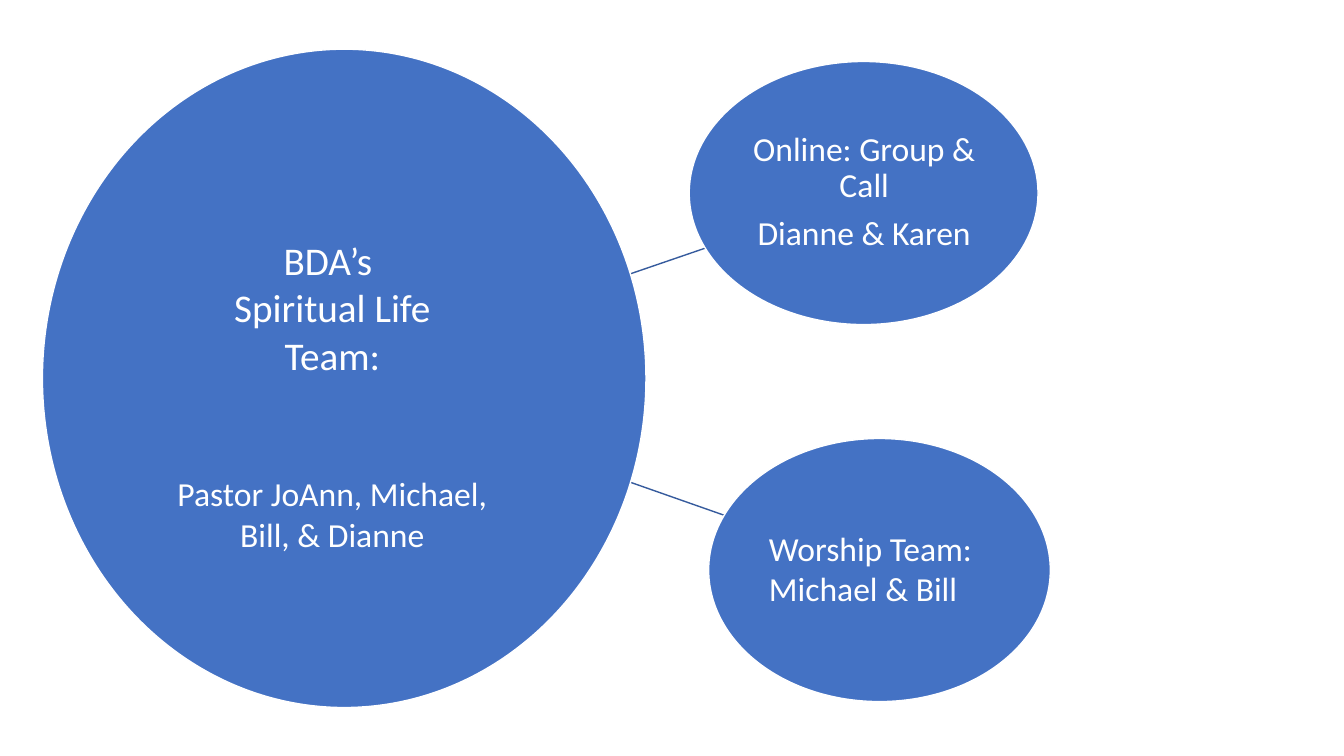
from lxml import etree
from pptx import Presentation
from pptx.dml.color import RGBColor
from pptx.enum import shapes, text
from pptx.oxml import ns
from pptx.util import Cm, Pt

BLUE = RGBColor(0x44, 0x72, 0xC4)
LINK_BLUE = RGBColor(0x36, 0x5B, 0x9D)
WHITE = RGBColor(0xFF, 0xFF, 0xFF)
FONT = "Calibri"

TEAM = (1.07, 1.24, 15.21, 16.59)
ONLINE = (17.37, 1.55, 8.79, 6.63)
WORSHIP = (17.86, 11.05, 8.61, 6.63)


def add_link(page, start, end):
    """Draw a thin line between two points given in centimetres."""
    link = page.shapes.add_connector(
        shapes.MSO_CONNECTOR.STRAIGHT, *(Cm(value) for value in start + end))
    link.line.color.rgb = LINK_BLUE
    link.line.width = Pt(1)
    properties = link._element.find(ns.qn("p:spPr"))
    etree.SubElement(properties, ns.qn("a:effectLst"))


def add_circle(page, box):
    """Draw a blue ellipse that fills the box."""
    circle = page.shapes.add_shape(
        shapes.MSO_SHAPE.OVAL, *(Cm(value) for value in box))
    circle.shadow.inherit = False
    circle.fill.solid()
    circle.fill.fore_color.rgb = BLUE
    circle.line.color.rgb = WHITE
    circle.line.width = Pt(1)


def add_frame(page, box, offset, size, anchor=text.MSO_ANCHOR.TOP, inset=None):
    """Add an empty wrapping text frame at an offset inside the box."""
    place = (box[0] + offset[0], box[1] + offset[1], *size)
    frame = page.shapes.add_textbox(*(Cm(value) for value in place)).text_frame
    frame.word_wrap = True
    frame.vertical_anchor = anchor
    if inset is not None:
        frame.margin_left = frame.margin_right = Cm(inset)
        frame.margin_top = frame.margin_bottom = Cm(inset)
    return frame


def add_text(frame, words, size=24, align=text.PP_ALIGN.CENTER,
             before=0, after=0, spacing=1.0):
    """Write one formatted paragraph, using the empty first one if free."""
    first = frame.paragraphs[0]
    para = frame.add_paragraph() if first.runs else first
    para.alignment = align
    para.space_before = Pt(before)
    para.space_after = Pt(after)
    para.line_spacing = spacing
    span = para.add_run()
    span.text = words
    span.font.name = FONT
    span.font.size = Pt(size)
    span.font.color.rgb = WHITE


def add_team(page, box):
    """Build the large circle with the team's name and members."""
    add_circle(page, box)
    frame = add_frame(page, box, (3.1, 4.6), (8.41, 8.28))
    for words in ("BDA’s ", "Spiritual Life", "Team:"):
        add_text(frame, words, size=28)
    add_text(frame, "Pastor JoAnn, Michael, ", before=68)
    add_text(frame, "Bill, & Dianne")


def add_online(page, box):
    """Build the upper circle for the online group."""
    add_circle(page, box)
    frame = add_frame(page, box, (1.3, 0.96), (6.22, 4.67),
                      anchor=text.MSO_ANCHOR.MIDDLE, inset=0.05)
    for words in ("Online: Group & Call", "Dianne & Karen"):
        add_text(frame, words, after=8.4, spacing=0.9)


def add_worship(page, box):
    """Build the lower circle for the worship group."""
    add_circle(page, box)
    frame = add_frame(page, box, (1.27, 2.13), (6.27, 2.31))
    add_text(frame, "Worship Team: Michael & Bill", align=text.PP_ALIGN.LEFT)


def add_links(page, team, online, worship):
    """Join the team's circle to both smaller circles."""
    edge = team[0] + 11.17
    add_link(page, (edge, team[1] + 9.63), (worship[0] + 0.38, worship[1] + 1.93))
    add_link(page, (edge, team[1] + 6.91), (online[0] + 0.41, online[1] + 4.7))


def main():
    """Create the deck and save it."""
    deck = Presentation()
    deck.slide_width, deck.slide_height = Cm(33.87), Cm(19.05)
    page = deck.slides.add_slide(deck.slide_layouts[6])
    add_links(page, TEAM, ONLINE, WORSHIP)
    add_team(page, TEAM)
    add_online(page, ONLINE)
    add_worship(page, WORSHIP)
    deck.save("out.pptx")


if __name__ == "__main__":
    main()
